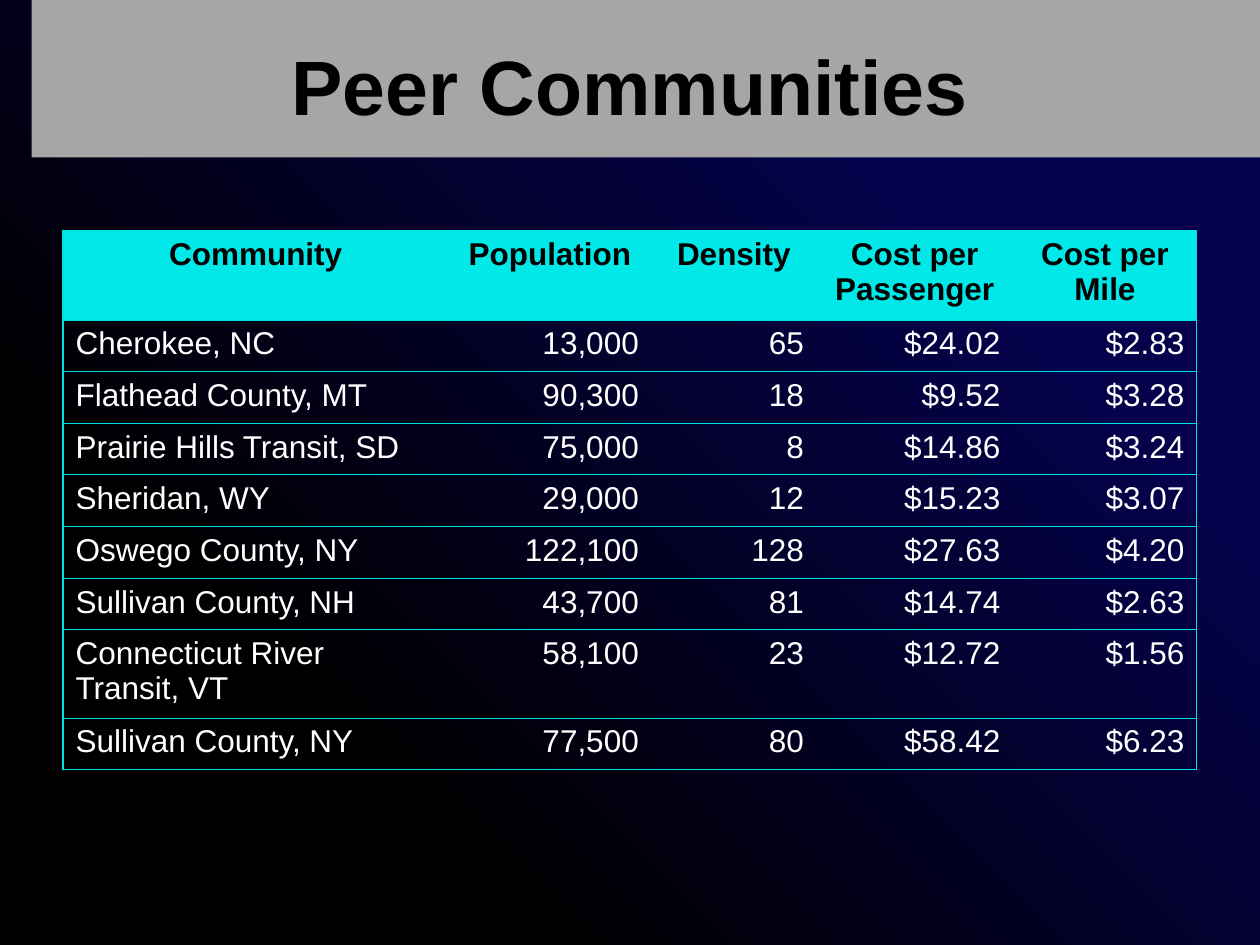
from lxml import etree
from pptx import Presentation
from pptx.dml.color import RGBColor
from pptx.enum.shapes import MSO_SHAPE
from pptx.enum.text import MSO_ANCHOR, PP_ALIGN
from pptx.oxml.ns import qn
from pptx.util import Inches, Pt

LEFT, MID, RIGHT = PP_ALIGN.LEFT, PP_ALIGN.CENTER, PP_ALIGN.RIGHT
RECT = MSO_SHAPE.RECTANGLE
MIDDLE = MSO_ANCHOR.MIDDLE

COLS = [3.06, 1.61, 1.31, 1.56, 1.46]
HEAD_H, ROW_H, TALL_H = 0.71, 0.41, 0.66
ROWS = [
    ("Community", "Population", "Density", "Cost per Passenger", "Cost per Mile"),
    ("Cherokee, NC", "13,000", "65", "$24.02", "$2.83"),
    ("Flathead County, MT", "90,300", "18", "$9.52", "$3.28"),
    ("Prairie Hills Transit, SD", "75,000", "8", "$14.86", "$3.24"),
    ("Sheridan, WY", "29,000", "12", "$15.23", "$3.07"),
    ("Oswego County, NY", "122,100", "128", "$27.63", "$4.20"),
    ("Sullivan County, NH", "43,700", "81", "$14.74", "$2.63"),
    ("Connecticut River Transit, VT", "58,100", "23", "$12.72", "$1.56"),
    ("Sullivan County, NY", "77,500", "80", "$58.42", "$6.23"),
]


def rgb(code):
    return RGBColor.from_string(code)


class Deck:
    font = "Arial"
    dark, light = "000000", "FFFFFF"
    band, head, rule = "A6A6A6", "00E8E8", "00E2E2"

    def __init__(self, slide):
        self.slide = slide

    def ground(self, stops, angle):
        fill = self.slide.background.fill
        fill.gradient()
        fill.gradient_angle = angle
        for stop, (pos, code) in zip(fill.gradient_stops, stops):
            stop.position = pos
            stop.color.rgb = rgb(code)

    def rect(self, x, y, w, h, code):
        box = self.slide.shapes.add_shape(RECT, Inches(x), Inches(y), Inches(w), Inches(h))
        box.shadow.inherit = False
        box.fill.solid()
        box.fill.fore_color.rgb = rgb(code)
        box.line.fill.background()

    def text(self, frame, words, size, code, bold, align):
        para = frame.paragraphs[0]
        para.alignment = align
        run = para.add_run()
        run.text = words
        font = run.font
        font.name, font.size, font.bold = self.font, Pt(size), bold
        font.color.rgb = rgb(code)

    def title(self, x, y, w, h, words):
        box = self.slide.shapes.add_textbox(Inches(x), Inches(y), Inches(w), Inches(h))
        frame = box.text_frame
        frame.word_wrap = True
        frame.vertical_anchor = MIDDLE
        self.text(frame, words, 44, self.dark, True, MID)

    def edge(self, cell, side, shown):
        """Draw one cell border, or switch it off."""
        props = cell._tc.get_or_add_tcPr()
        line = etree.SubElement(props, qn("a:ln" + side), w=str(Pt(0.75)))
        if shown:
            fill = etree.SubElement(line, qn("a:solidFill"))
            etree.SubElement(fill, qn("a:srgbClr"), val=self.rule)
        else:
            etree.SubElement(line, qn("a:noFill"))

    def table(self, x, y, rows, cols, highs):
        grid = self.slide.shapes.add_table(
            len(rows), len(cols), Inches(x), Inches(y),
            Inches(sum(cols)), Inches(sum(highs))).table
        grid.first_row = grid.horz_banding = False
        for col, width in zip(grid.columns, cols):
            col.width = Inches(width)
        for r, (row, high) in enumerate(zip(rows, highs)):
            grid.rows[r].height = Inches(high)
            for c, words in enumerate(row):
                cell = grid.cell(r, c)
                # Schema order: left, right, top, bottom, then the fill.
                self.edge(cell, "L", c == 0)
                self.edge(cell, "R", c == len(cols) - 1)
                self.edge(cell, "T", True)
                self.edge(cell, "B", True)
                if r == 0:
                    cell.fill.solid()
                    cell.fill.fore_color.rgb = rgb(self.head)
                    self.text(cell.text_frame, words, 18, self.dark, True, MID)
                else:
                    cell.fill.background()
                    align = RIGHT if c else LEFT
                    self.text(cell.text_frame, words, 18, self.light, False, align)


def main():
    prs = Presentation()
    prs.slide_width, prs.slide_height = Inches(10), Inches(7.5)
    deck = Deck(prs.slides.add_slide(prs.slide_layouts[6]))
    deck.ground([(0.25, "05014B"), (0.75, "000000")], 225)
    deck.rect(0.25, 0, 9.75, 1.25, deck.band)
    deck.title(0.5, 0.17, 9, 1, "Peer Communities")
    highs = [HEAD_H] + [TALL_H if "River" in row[0] else ROW_H for row in ROWS[1:]]
    deck.table(0.5, 1.83, ROWS, COLS, highs)
    prs.save("out.pptx")


if __name__ == "__main__":
    main()
